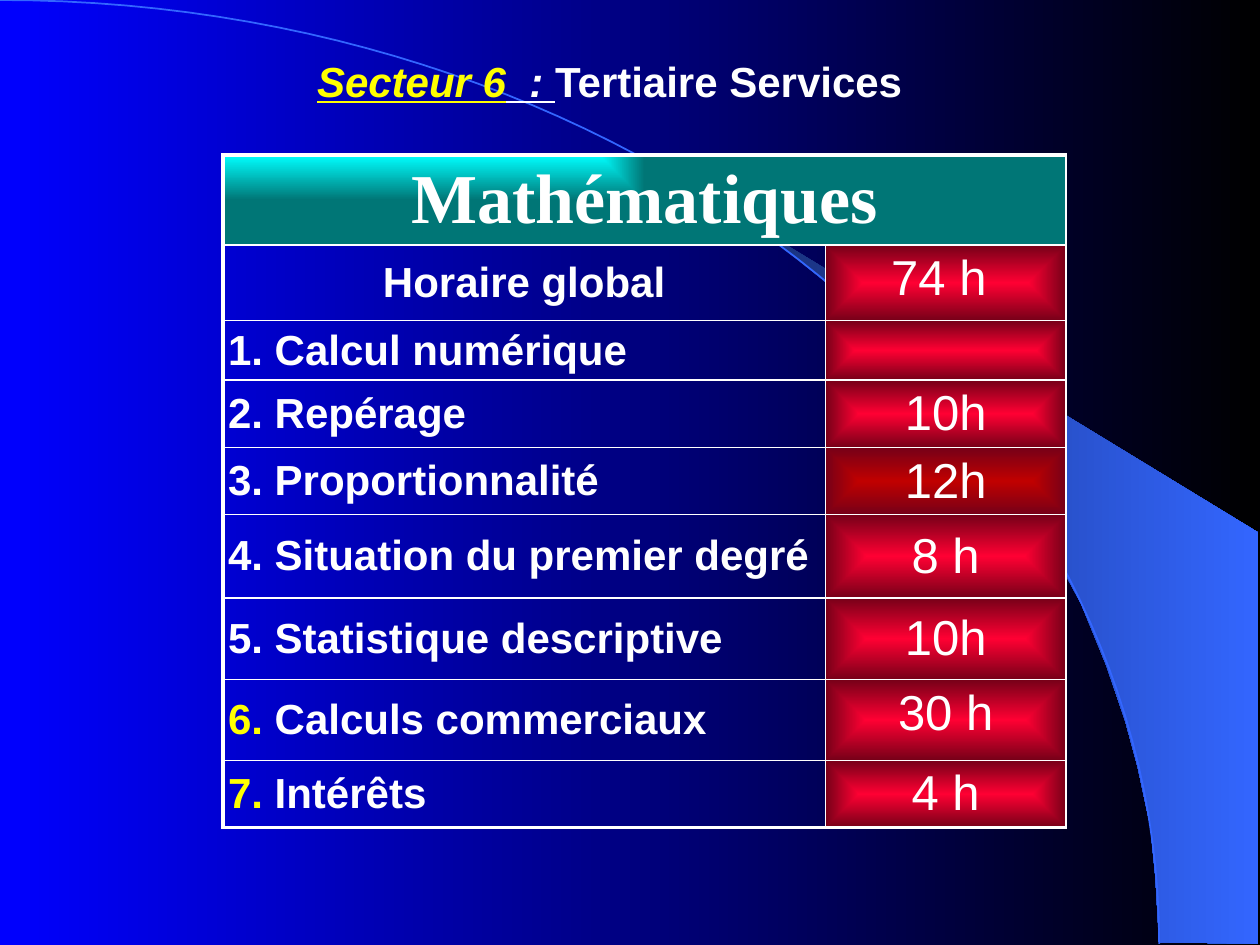
from lxml import etree
from pptx import Presentation, util as u
from pptx.dml.color import RGBColor
from pptx.enum import text
from pptx.oxml import ns

Inches = u.Inches
WHITE, YELLOW = "FFFFFF", "FFFF00"
RED, DARK_RED, DEEP_RED = "FF0033", "C00000", "760018"
BLUE, DARK_BLUE = "3366FF", "182F76"
CENTER, LEFT = text.PP_ALIGN.CENTER, text.PP_ALIGN.LEFT
MIDDLE, TOP = text.MSO_ANCHOR.MIDDLE, text.MSO_ANCHOR.TOP

COLUMN_WIDTHS = [4.78, 1.91]
ROW_HEIGHTS = [0.71, 0.6, 0.41, 0.47, 0.47, 0.66, 0.65, 0.64, 0.42]
# number, its colour, topic, hours, anchor of the hours, centre colour of the hours cell
TOPICS = [
    ("1.", WHITE, "Calcul numérique", "", TOP, RED),
    ("2.", WHITE, "Repérage", "10h", TOP, RED),
    ("3.", WHITE, "Proportionnalité", "12h", MIDDLE, DARK_RED),
    ("4.", WHITE, "Situation du premier degré", "8 h", MIDDLE, RED),
    ("5.", WHITE, "Statistique descriptive", "10h", MIDDLE, RED),
    ("6.", YELLOW, "Calculs commerciaux", "30 h", TOP, RED),
    ("7.", YELLOW, "Intérêts", "4 h", TOP, RED),
]
WEDGE = [(9.2, 7.48), (9.99, 7.49), (9.99, 4.23), (5.89, 1.73), (6.24, 1.99), (6.53, 2.22),
         (6.85, 2.5), (7.16, 2.8), (7.62, 3.3), (8.03, 3.84), (8.32, 4.31), (8.58, 4.79),
         (8.78, 5.28), (8.93, 5.72), (9.03, 6.09), (9.13, 6.56), (9.17, 6.96), (9.2, 7.48)]
ARC = [(0, 0), (5.08, 0), (9.2, 3.35), (9.2, 7.49)]


def color(value):
    return RGBColor.from_string(value)


def linear_gradient(fill, start, end):
    fill.gradient()
    fill.gradient_angle = 0
    for stop, value in zip(fill.gradient_stops, (start, end)):
        stop.color.rgb = color(value)


def bezier(points, steps=60):
    """Return points along a cubic curve given by its four control points."""
    def at(t):
        weights = ((1 - t) ** 3, 3 * t * (1 - t) ** 2, 3 * t * t * (1 - t), t ** 3)
        return tuple(sum(w * p[axis] for w, p in zip(weights, points)) for axis in (0, 1))
    return [at(step / steps) for step in range(steps + 1)]


def add_run(paragraph, content, size=24, font="Arial", fill=WHITE, bold=True,
            italic=False, underline=False):
    run = paragraph.add_run()
    run.text = content
    run.font.size, run.font.name = u.Pt(size), font
    run.font.bold, run.font.italic, run.font.underline = bold, italic, underline
    run.font.color.rgb = color(fill)
    paragraph.space_before = u.Pt(size * 0.2)


class SlideBuilder:
    def __init__(self, slide):
        self.slide = slide

    def background(self, start, end):
        linear_gradient(self.slide.background.fill, start, end)

    def outline(self, points, close):
        builder = self.slide.shapes.build_freeform(
            Inches(points[0][0]), Inches(points[0][1]))
        builder.add_line_segments([(Inches(x), Inches(y)) for x, y in points[1:]], close=close)
        shape = builder.convert_to_shape()
        shape.shadow.inherit = False
        return shape

    def wedge(self, points):
        shape = self.outline(points, True)
        linear_gradient(shape.fill, DARK_BLUE, BLUE)
        shape.line.fill.background()

    def arc(self, points):
        shape = self.outline(bezier(points), False)
        shape.fill.background()
        shape.line.color.rgb = color(BLUE)
        shape.line.width = u.Pt(1)

    def title(self, left, top, width, height):
        frame = self.slide.shapes.add_textbox(
            Inches(left), Inches(top), Inches(width), Inches(height)).text_frame
        frame.word_wrap = True
        paragraph = frame.paragraphs[0]
        paragraph.alignment = CENTER
        add_run(paragraph, "Secteur 6", fill=YELLOW, italic=True, underline=True)
        add_run(paragraph, "  : ", italic=True, underline=True)
        add_run(paragraph, "Tertiaire Services ")

    def table(self, left, top, widths, heights):
        frame = self.slide.shapes.add_table(
            len(heights), len(widths), Inches(left), Inches(top),
            Inches(sum(widths)), Inches(sum(heights)))
        table = frame.table
        table.first_row = table.horz_banding = False
        for column, width in zip(table.columns, widths):
            column.width = Inches(width)
        for row, height in zip(table.rows, heights):
            row.height = Inches(height)
        return table

    def cell(self, cell, runs, align=CENTER, anchor=MIDDLE):
        cell.margin_left = cell.margin_right = Inches(0.04)
        cell.margin_top = cell.margin_bottom = Inches(0.05)
        cell.vertical_anchor = anchor
        cell.fill.background()
        paragraph = cell.text_frame.paragraphs[0]
        paragraph.alignment = align
        for content, style in runs:
            add_run(paragraph, content, **style)

    def path_gradient(self, cell, start, end, kind, focus):
        """Fill a cell with a gradient that spreads from the focus rectangle (l, t, r, b)."""
        linear_gradient(cell.fill, start, end)
        gradient = cell._tc.tcPr.find(ns.qn("a:gradFill"))
        gradient.remove(gradient.find(ns.qn("a:lin")))
        path = etree.SubElement(gradient, ns.qn("a:path"), {"path": kind})
        etree.SubElement(path, ns.qn("a:fillToRect"),
                         {side: str(part * 1000) for side, part in zip("ltrb", focus)})

    def hours_cell(self, cell, hours, anchor, center):
        runs = [(hours, dict(size=28, bold=False))] if hours else []
        self.cell(cell, runs, anchor=anchor)
        self.path_gradient(cell, center, DEEP_RED, "shape", (50, 50, 50, 50))

    def borders(self, table):
        """Draw thin white rules, thicker on the left, top and bottom of the table."""
        last = len(table.rows) - 1
        for row_index, row in enumerate(table.rows):
            for column_index, cell in enumerate(row.cells):
                thick = {"L": column_index == 0, "R": False,
                         "T": row_index == 0, "B": row_index == last}
                properties = cell._tc.get_or_add_tcPr()
                for index, (side, is_thick) in enumerate(thick.items()):
                    line = etree.Element(ns.qn("a:ln" + side),
                                         {"w": str(u.Pt(2.25 if is_thick else 1))})
                    fill = etree.SubElement(line, ns.qn("a:solidFill"))
                    etree.SubElement(fill, ns.qn("a:srgbClr"), {"val": WHITE})
                    properties.insert(index, line)


def main():
    presentation = Presentation()
    presentation.slide_width, presentation.slide_height = Inches(10), Inches(7.5)
    builder = SlideBuilder(presentation.slides.add_slide(presentation.slide_layouts[6]))
    builder.background("0000FF", "000000")
    builder.wedge(WEDGE)
    builder.arc(ARC)

    table = builder.table(1.77, 1.23, COLUMN_WIDTHS, ROW_HEIGHTS)
    header = table.cell(0, 0)
    header.merge(table.cell(0, 1))
    builder.cell(header, [("Mathématiques", dict(size=40, font="Times New Roman"))])
    builder.path_gradient(header, "00FFFF", "007676", "rect", (0, 0, 100, 100))
    builder.cell(table.cell(1, 0), [("Horaire global", {})])
    builder.hours_cell(table.cell(1, 1), "74 h ", TOP, RED)
    for row, (number, tint, topic, hours, anchor, center) in enumerate(TOPICS, start=2):
        builder.cell(table.cell(row, 0), [(number, dict(fill=tint)), (" " + topic, {})], LEFT)
        builder.hours_cell(table.cell(row, 1), hours, anchor, center)
    builder.borders(table)

    builder.title(0.91, 0.39, 7.95, 0.5)
    presentation.save("out.pptx")


if __name__ == "__main__":
    main()
